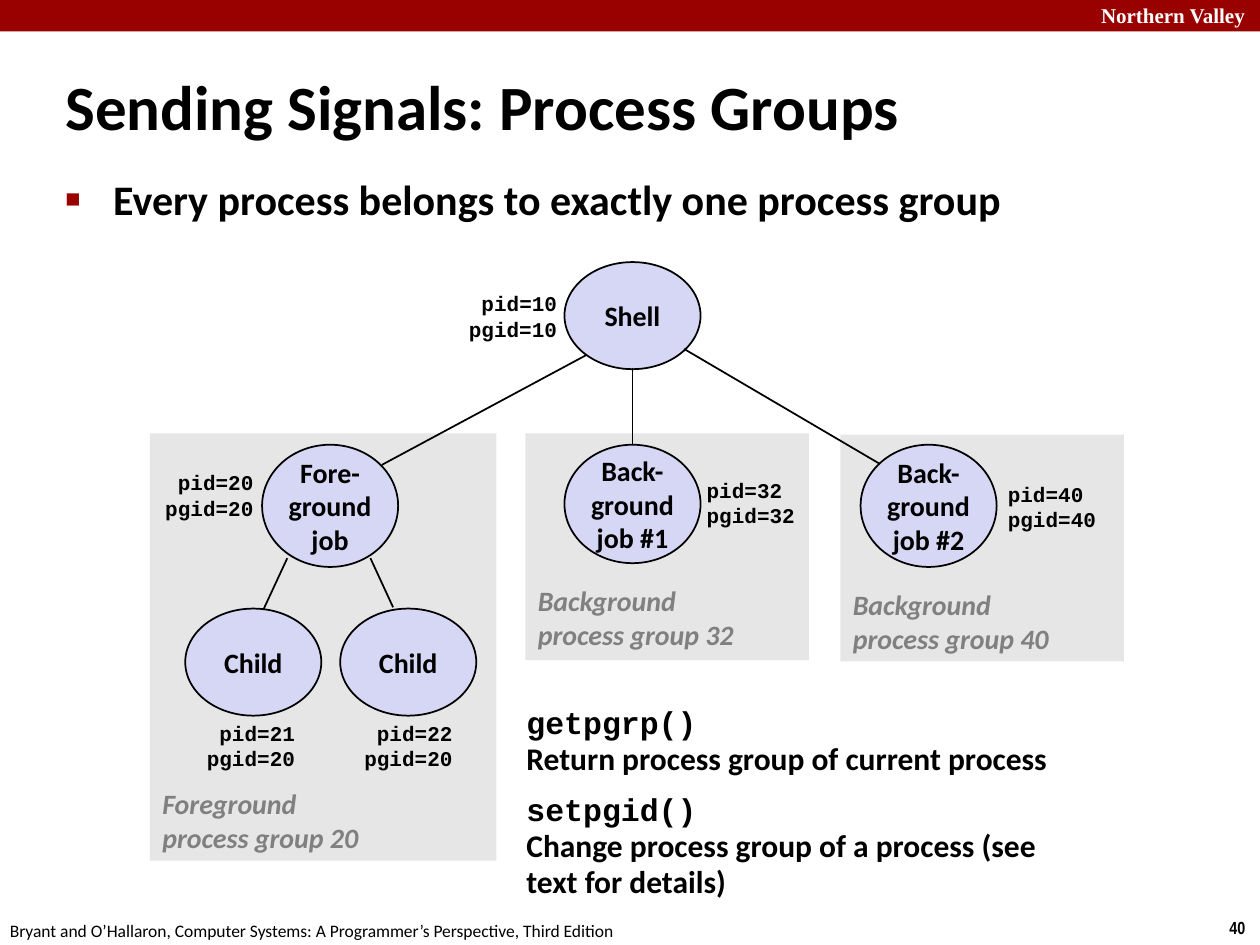
from lxml import etree
from pptx import Presentation
from pptx.dml.color import RGBColor
from pptx.enum.shapes import MSO_CONNECTOR, MSO_SHAPE
from pptx.enum.text import MSO_ANCHOR, PP_ALIGN
from pptx.oxml.ns import qn
from pptx.util import Inches, Pt

COLORS = {
    "banner": "990000",
    "group": "E6E6E6",
    "process": "D6D6F5",
    "text": "000000",
    "group_label": "808080",
    "white": "FFFFFF",
}
SANS, MONO = "Calibri", "Courier New"

BANNER = "Northern Valley"
TITLE = "Sending Signals: Process Groups"
BULLET = "Every process belongs to exactly one process group"
FOOTER = "Bryant and O’Hallaron, Computer Systems: A Programmer’s Perspective, Third Edition"
PAGE_NUMBER = "40"

GROUPS = [
    ((6.67, 3.45, 2.25, 1.8), ["Background", "process group 40"], 4.61),
    ((4.17, 3.44, 2.25, 1.8), ["Background", "process group 32"], 4.58),
    ((1.19, 3.44, 2.75, 3.39), ["Foreground", "process group 20"], 6.19),
]
PROCESSES = [
    (2.08, 3.53, 0.97, ["Fore-", "ground", "job"]),
    (4.48, 3.53, 0.94, ["Back-", "ground", "job #1"]),
    (6.83, 3.53, 0.97, ["Back-", "ground", "job #2"]),
    (4.48, 2.08, 0.85, ["Shell"]),
    (1.47, 4.83, 0.85, ["Child"]),
    (2.7, 4.83, 0.85, ["Child"]),
]
BRANCHES = [
    (2.28, 4.43, 2.09, 4.84),
    (2.94, 4.43, 3.12, 4.82),
    (5.02, 2.92, 5.02, 3.53),
    (4.65, 2.82, 3.03, 3.69),
    (5.43, 2.77, 6.98, 3.68),
]
IDENTIFIERS = [
    (3.61, 2.26, 10, 10, PP_ALIGN.RIGHT),
    (1.2, 3.68, 20, 20, PP_ALIGN.RIGHT),
    (5.51, 3.74, 32, 32, PP_ALIGN.LEFT),
    (7.9, 3.77, 40, 40, PP_ALIGN.LEFT),
    (1.53, 5.67, 21, 20, PP_ALIGN.RIGHT),
    (2.78, 5.67, 22, 20, PP_ALIGN.RIGHT),
]
FUNCTIONS = [
    ("getpgrp()", "Return process group of current process"),
    ("setpgid()", "Change process group of a process (see text for details)"),
]


def color(name):
    return RGBColor.from_string(COLORS[name])


def write_lines(shape, lines, size, font=SANS, ink="text", bold=True, italic=False,
                align=PP_ALIGN.LEFT, anchor=MSO_ANCHOR.MIDDLE, wrap=False):
    frame = shape.text_frame
    frame.word_wrap = wrap
    frame.vertical_anchor = anchor
    frame.text = "\n".join(lines)
    for paragraph in frame.paragraphs:
        paragraph.alignment = align
        paragraph.font.name = font
        paragraph.font.size = Pt(size)
        paragraph.font.bold = bold
        paragraph.font.italic = italic
        paragraph.font.color.rgb = color(ink)
    return frame


def add_text(slide, box, lines, size, **style):
    shape = slide.shapes.add_textbox(*map(Inches, box))
    return write_lines(shape, lines, size, **style)


def add_filled(slide, kind, box, fill, outlined=False):
    shape = slide.shapes.add_shape(kind, *map(Inches, box))
    shape.shadow.inherit = False
    shape.fill.solid()
    shape.fill.fore_color.rgb = color(fill)
    if outlined:
        shape.line.color.rgb = color("text")
        shape.line.width = Pt(1)
    else:
        shape.line.fill.background()
    return shape


def add_branch(slide, ends):
    connector = slide.shapes.add_connector(MSO_CONNECTOR.STRAIGHT, *map(Inches, ends))
    connector.line.color.rgb = color("text")
    connector.line.width = Pt(1)
    etree.SubElement(connector._element.spPr, qn("a:effectLst"))


def add_bullet(paragraph):
    properties = paragraph._p.get_or_add_pPr()
    properties.set("marL", str(Inches(0.38)))
    properties.set("indent", str(-Inches(0.38)))
    paragraph.space_before = Pt(4.8)
    bullet_color = etree.Element(qn("a:buClr"))
    etree.SubElement(bullet_color, qn("a:srgbClr"), val=COLORS["banner"])
    bullet_parts = [
        bullet_color,
        etree.Element(qn("a:buSzPct"), val="60000"),
        etree.Element(qn("a:buFont"), typeface="Arial"),
        etree.Element(qn("a:buChar"), char="■"),
    ]
    position = list(properties).index(properties.find(qn("a:spcBef"))) + 1
    for offset, part in enumerate(bullet_parts):
        properties.insert(position + offset, part)


def add_functions(slide):
    frame = add_text(slide, (4.08, 5.55, 4.5, 1.7), [""] * len(FUNCTIONS), 18,
                     anchor=MSO_ANCHOR.TOP, wrap=True)
    for paragraph, (name, description) in zip(frame.paragraphs, FUNCTIONS):
        paragraph.line_spacing = 0.95
        paragraph.space_before = Pt(9)
        name_run = paragraph.add_run()
        name_run.text = name
        name_run.font.name = MONO
        paragraph.add_line_break()
        paragraph.add_run().text = description


def main():
    presentation = Presentation()
    presentation.slide_width, presentation.slide_height = Inches(10), Inches(7.5)
    slide = presentation.slides.add_slide(presentation.slide_layouts[6])

    add_filled(slide, MSO_SHAPE.RECTANGLE, (0, 0, 10, 0.25), "banner")
    add_text(slide, (8.64, -0.03, 1.43, 0.3), [BANNER], 12, font="Times New Roman",
             ink="white")
    add_text(slide, (9.66, 7.23, 0.34, 0.27), [PAGE_NUMBER], 10, font="Arial Narrow")
    add_text(slide, (-0.02, 7.25, 5.08, 0.27), [FOOTER], 10, bold=False)

    for box, _, _ in GROUPS:
        add_filled(slide, MSO_SHAPE.RECTANGLE, box, "group")

    add_text(slide, (0.42, 0.42, 8.3, 0.83), [TITLE], 36, wrap=True)
    body = add_text(slide, (0.42, 1.33, 8.44, 0.67), [BULLET], 24,
                    anchor=MSO_ANCHOR.TOP, wrap=True)
    add_bullet(body.paragraphs[0])

    for left, top, height, lines in PROCESSES:
        ellipse = add_filled(slide, MSO_SHAPE.OVAL, (left, top, 1.08, height),
                             "process", outlined=True)
        write_lines(ellipse, lines, 16, align=PP_ALIGN.CENTER)
    for ends in BRANCHES:
        add_branch(slide, ends)

    for (left, *_), lines, top in GROUPS:
        add_text(slide, (left, top, 1.78, 0.64), lines, 16, ink="group_label", italic=True)
    for left, top, pid, pgid, align in IDENTIFIERS:
        add_text(slide, (left, top, 0.91, 0.5), [f"pid={pid}", f"pgid={pgid}"], 12,
                 font=MONO, align=align)
    add_functions(slide)

    presentation.save("out.pptx")


if __name__ == "__main__":
    main()
